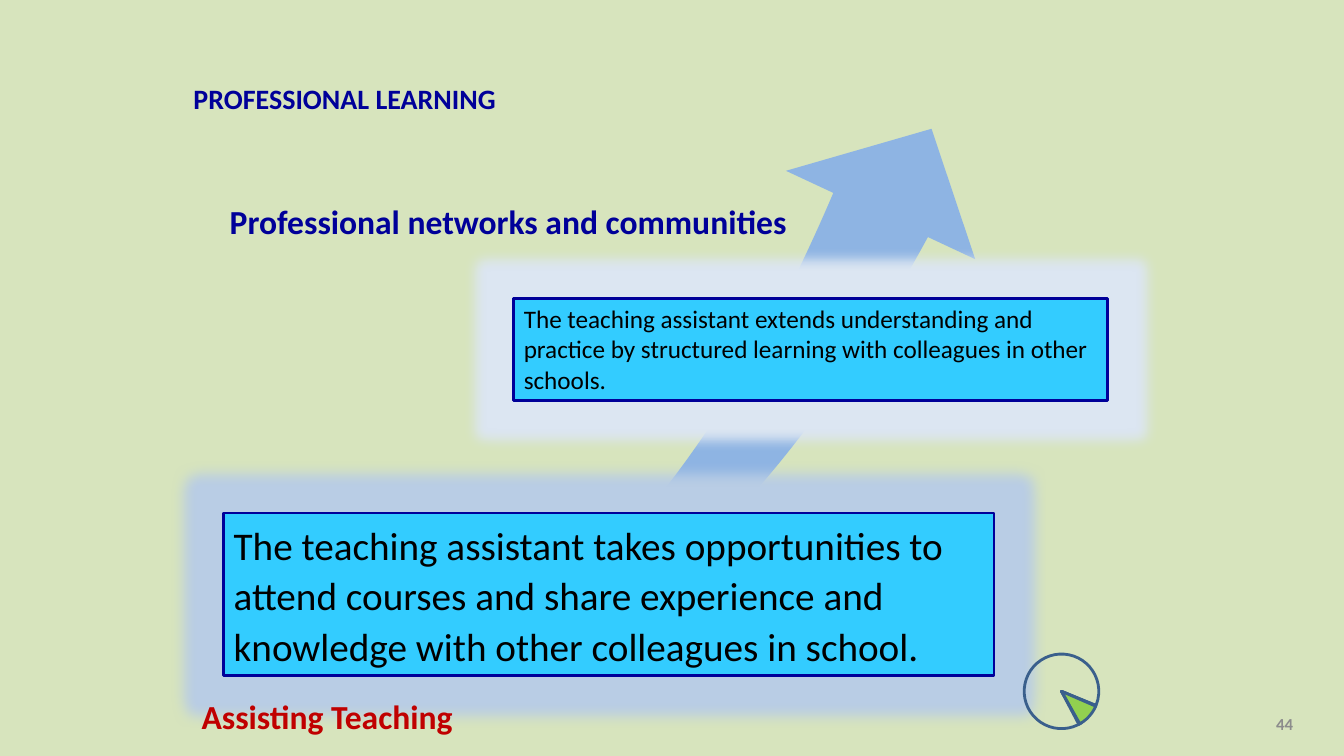
from lxml import etree
from pptx import Presentation
from pptx.dml.color import RGBColor
from pptx.enum.shapes import MSO_SHAPE
from pptx.enum.text import MSO_ANCHOR, MSO_AUTO_SIZE, PP_ALIGN
from pptx.oxml.ns import qn
from pptx.util import Cm, Pt

RECT, PIE, SWOOSH = MSO_SHAPE.RECTANGLE, MSO_SHAPE.PIE, MSO_SHAPE.SWOOSH_ARROW
TOP, MIDDLE = MSO_ANCHOR.TOP, MSO_ANCHOR.MIDDLE
LEFT, RIGHT = PP_ALIGN.LEFT, PP_ALIGN.RIGHT
NO_AUTOFIT = MSO_AUTO_SIZE.NONE

FONT = "Calibri"
NAVY, RED, GREY, BLACK = "000099", "C00000", "8C8C8C", "000000"
PIE_AT = (25.81, 16.48, 1.88, 1.88)
PIE_SLICES = [
    (140.23, 118.82, None),
    (119.1, 119.67, None),
    (119.57, 141.86, "92D050"),
    (142.61, 142.9, None),
]


def rgb(value):
    """Return the colour for a hex string."""
    return RGBColor.from_string(value)


def write(sp, text, size, color, bold=False, align=LEFT, anchor=TOP):
    """Write one formatted paragraph into a shape and return it."""
    tf = sp.text_frame
    tf.word_wrap = True
    tf.auto_size = NO_AUTOFIT
    tf.vertical_anchor = anchor
    p = tf.paragraphs[0]
    p.alignment = align
    r = p.add_run()
    r.text = text
    r.font.name = FONT
    r.font.size = Pt(size)
    r.font.bold = bold
    r.font.color.rgb = rgb(color)
    return p


def add_title(s, at, text, size):
    """Place and fill the title placeholder."""
    sp = s.shapes.title
    sp.left, sp.top, sp.width, sp.height = map(Cm, at)
    write(sp, text, size, NAVY, bold=True)


def add_label(s, at, text, size, color, **layout):
    """Add a bold text box."""
    sp = s.shapes.add_textbox(*map(Cm, at))
    write(sp, text, size, color, bold=True, **layout)


def add_figure(shapes, kind, at, fill=None, line=None):
    """Add a flat preset shape with optional fill and outline."""
    sp = shapes.add_shape(kind, *map(Cm, at))
    sp.shadow.inherit = False
    if fill:
        sp.fill.solid()
        sp.fill.fore_color.rgb = rgb(fill)
    else:
        sp.fill.background()
    if line:
        sp.line.color.rgb = rgb(line)
        sp.line.width = Pt(2)
    else:
        sp.line.fill.background()
    return sp


def add_glow(sp, color, radius):
    """Put a soft glow around a shape."""
    effects = sp.element.spPr.find(qn("a:effectLst"))
    glow = etree.SubElement(effects, qn("a:glow"), rad=str(Pt(radius)))
    etree.SubElement(glow, qn("a:srgbClr"), val=color)


def add_statement(s, at, text, size, glow):
    """Add a framed, glowing statement box and return its paragraph."""
    sp = add_figure(s.shapes, RECT, at, "33CCFF", NAVY)
    add_glow(sp, glow, 18)
    return write(sp, text, size, BLACK)


def add_swoosh(s, at):
    """Add the rising arrow behind the statements."""
    sp = add_figure(s.shapes, SWOOSH, at, "8EB4E3")
    sp.rotation = 288.6
    sp.element.spPr.get_or_add_xfrm().set("flipV", "1")
    sp.adjustments[0] = sp.adjustments[1] = 0.25


def add_pie(s):
    """Add the grouped pie with one highlighted slice."""
    group = s.shapes.add_group_shape()
    for start, end, fill in PIE_SLICES:
        sp = add_figure(group.shapes, PIE, PIE_AT, fill, "3A5F8C")
        sp.adjustments[0], sp.adjustments[1] = start, end
        sp.rotation = 184.1


def main():
    """Build the slide and save it."""
    prs = Presentation()
    prs.slide_width, prs.slide_height = Cm(33.87), Cm(19.05)
    s = prs.slides.add_slide(prs.slide_layouts[5])
    s.background.fill.solid()
    s.background.fill.fore_color.rgb = rgb("D7E4BD")

    add_title(s, (4.62, 1.93, 22.91, 1.12), "PROFESSIONAL LEARNING", 20)
    add_swoosh(s, (8.61, 5.56, 18.03, 10.46))
    add_label(s, (5.54, 4.93, 15.67, 1.27),
              "Professional networks and communities", 24, NAVY)
    p = add_statement(
        s, (5.64, 12.93, 19.41, 4.09),
        "The teaching assistant takes opportunities to attend courses and share "
        "experience and knowledge with other colleagues in school.",
        28, "B9CDE5")
    p.line_spacing = 1.07
    p.space_after = Pt(8)
    add_statement(
        s, (12.95, 7.52, 14.96, 2.57),
        "The teaching assistant extends understanding and practice by structured "
        "learning with colleagues in other schools.",
        18, "DCE6F2")
    add_pie(s)
    add_label(s, (4.83, 17.42, 9.09, 1.27), "Assisting Teaching", 24, RED)
    add_label(s, (24.94, 17.73, 7.9, 1.02), "44", 12, GREY,
              align=RIGHT, anchor=MIDDLE)
    prs.save("out.pptx")


if __name__ == "__main__":
    main()
